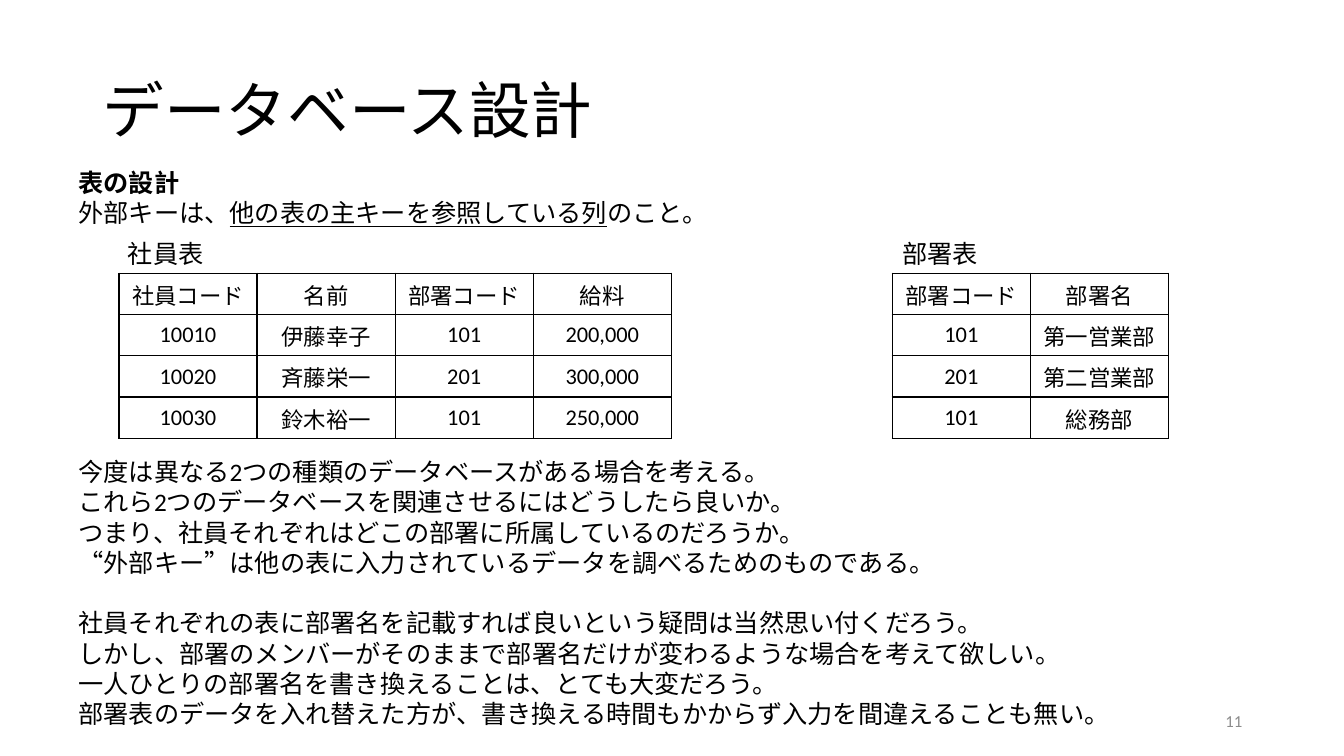
from pptx import Presentation
from pptx.dml.color import RGBColor
from pptx.enum.text import MSO_ANCHOR, PP_ALIGN
from pptx.oxml import parse_xml
from pptx.oxml.ns import nsdecls
from pptx.util import Pt

PX = 9144  # 100 px to the inch
FONT = "Calibri"
COLORS = {"ink": "000000", "grey": "8C8C8C"}

deck = Presentation()
deck.slide_width, deck.slide_height = 1333 * PX, 750 * PX
slide = deck.slides.add_slide(deck.slide_layouts[6])


def add_text(box, lines, size=18, color="ink", anchor=MSO_ANCHOR.TOP):
    """Add a text box with one paragraph per line; a line is a list of runs."""
    frame = slide.shapes.add_textbox(*[n * PX for n in box]).text_frame
    frame.word_wrap = True
    frame.vertical_anchor = anchor
    for i, line in enumerate(lines):
        par = frame.paragraphs[0] if i == 0 else frame.add_paragraph()
        par.font.name = FONT
        par.font.size = Pt(size)
        par.font.color.rgb = RGBColor.from_string(COLORS[color])
        for part in line:
            par.add_run().text = part
    return frame.paragraphs


def add_grid(left, rows):
    """Add a plain ruled table with centred text."""
    wide, high = 137, 41
    table = slide.shapes.add_table(
        len(rows), len(rows[0]), left * PX, 271 * PX,
        wide * len(rows[0]) * PX, high * len(rows) * PX).table
    table.first_row = table.horz_banding = False
    for r, row in enumerate(rows):
        table.rows[r].height = high * PX
        for c, word in enumerate(row):
            table.columns[c].width = wide * PX
            cell = table.cell(r, c)
            cell.text = word
            cell.vertical_anchor = MSO_ANCHOR.MIDDLE
            par = cell.text_frame.paragraphs[0]
            par.alignment = PP_ALIGN.CENTER
            par.font.name = FONT
            par.font.size = Pt(16)
            par.font.color.rgb = RGBColor.from_string(COLORS["ink"])
            # Borders come before the fill in the cell properties
            props = cell._tc.get_or_add_tcPr()
            for side in ("lnL", "lnR", "lnT", "lnB"):
                props.append(parse_xml(
                    f'<a:{side} {nsdecls("a")} w="12700"><a:solidFill>'
                    f'<a:srgbClr val="{COLORS["ink"]}"/></a:solidFill></a:{side}>'))
            cell.fill.background()


# Title and page number
title = add_text((92, 40, 1150, 145), [["データベース設計"]], 44,
                 anchor=MSO_ANCHOR.MIDDLE)
title[0].line_spacing = 0.9
page = add_text((942, 695, 300, 40), [["11"]], 12, "grey", MSO_ANCHOR.MIDDLE)
page[0].alignment = PP_ALIGN.RIGHT

# Definition of the foreign key
intro = add_text((68, 161, 1199, 71), [
    ["表の設計"],
    ["外部キーは、", "他の表の主キーを参照している列", "のこと。"],
])
intro[0].font.bold = True
intro[1].runs[1].font.underline = True

# Staff and department tables
add_text((117, 232, 111, 40), [["社員表"]])
add_grid(118, [
    ["社員コード", "名前", "部署コード", "給料"],
    ["10010", "伊藤幸子", "101", "200,000"],
    ["10020", "斉藤栄一", "201", "300,000"],
    ["10030", "鈴木裕一", "101", "250,000"],
])
add_text((885, 232, 111, 40), [["部署表"]])
add_grid(885, [
    ["部署コード", "部署名"],
    ["101", "第一営業部"],
    ["201", "第二営業部"],
    ["101", "総務部"],
])

# Explanation, with a one-line gap before the second part
body = add_text((68, 448, 1199, 283), [
    ["今度は異なる2つの種類のデータベースがある場合を考える。"],
    ["これら2つのデータベースを関連させるにはどうしたら良いか。"],
    ["つまり、社員それぞれはどこの部署に所属しているのだろうか。"],
    ["“外部キー”は他の表に入力されているデータを調べるためのものである。"],
    ["社員それぞれの表に部署名を記載すれば良いという疑問は当然思い付くだろう。"],
    ["しかし、部署のメンバーがそのままで部署名だけが変わるような場合を考えて欲しい。"],
    ["一人ひとりの部署名を書き換えることは、とても大変だろう。"],
    ["部署表のデータを入れ替えた方が、書き換える時間もかからず入力を間違えることも無い。"],
])
body[4].space_before = Pt(21.6)

deck.save("out.pptx")
